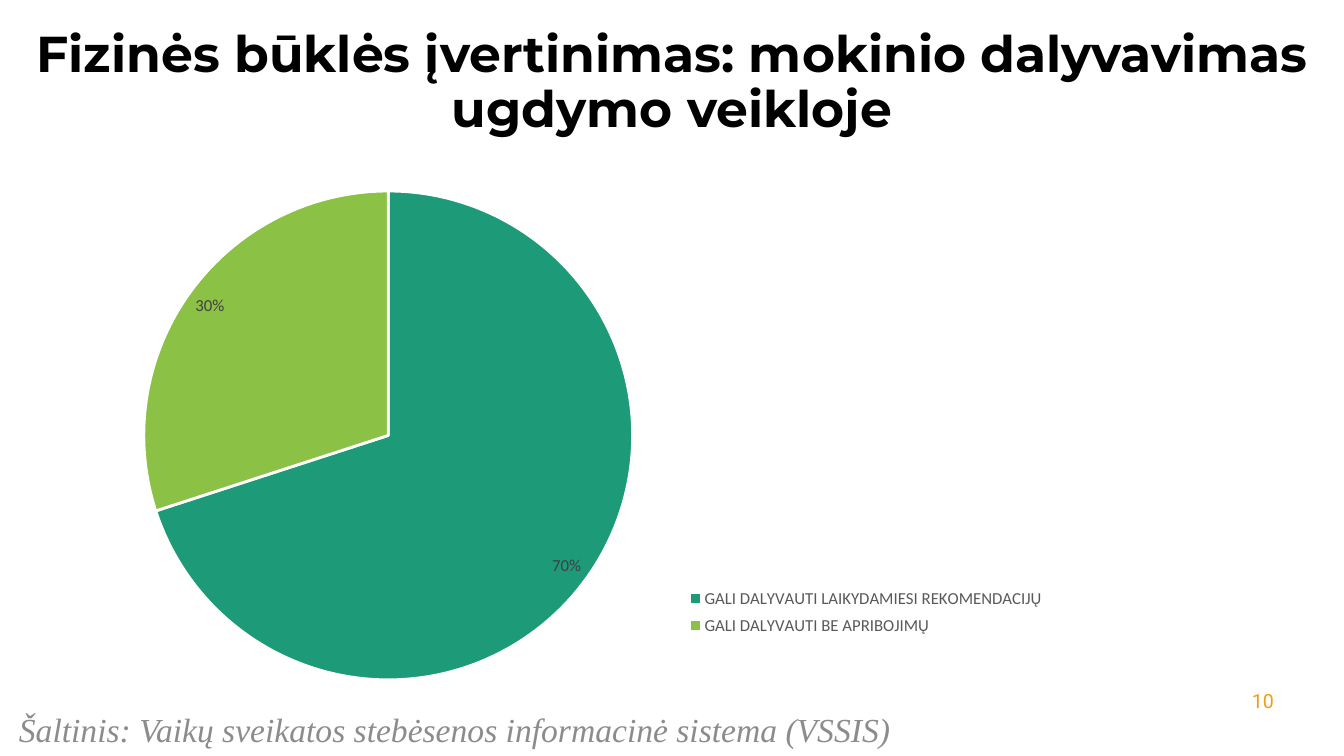
"""Build the slide on pupils' participation in educational activity."""
from lxml.etree import SubElement
from pptx import Presentation
from pptx.chart.data import CategoryChartData
from pptx.dml.color import RGBColor
from pptx.enum.chart import XL_CHART_TYPE, XL_LABEL_POSITION, XL_LEGEND_POSITION
from pptx.enum.text import MSO_ANCHOR, MSO_AUTO_SIZE, PP_ALIGN
from pptx.oxml.ns import qn
from pptx.util import Pt

PX = 914400 / 100.8
SLIDE = (1344, 756)
COLORS = {
    "title": "000000", "source": "8C8C8C", "number": "F19D19",
    "legend": "595959", "label": "404040", "border": "FFFFFF",
}
HEADING = "Fizinės būklės įvertinimas: mokinio dalyvavimas ugdymo veikloje"
SOURCE = "Šaltinis: Vaikų sveikatos stebėsenos informacinė sistema (VSSIS)"
PAGE = "10"
SHARES = [
    ("GALI DALYVAUTI LAIKYDAMIESI REKOMENDACIJŲ", 0.7, "1D9A78"),
    ("GALI DALYVAUTI BE APRIBOJIMŲ", 0.3, "8BC145"),
]
BOXES = {
    "title": (0, 0, 1344, 167),
    "source": (9, 704, 893, 38),
    "number": (1232, 684, 52, 40),
    "chart": (35, 176, 1077, 519),
    "pie": (144, 191, 489, 489),
    "legend": (684, 581, 364, 63),
}
FONTS = {
    "title": {"name": "Montserrat", "size": Pt(36), "bold": True},
    "source": {"name": "Times New Roman", "size": Pt(24), "italic": True},
    "number": {"name": "Roboto", "size": Pt(14)},
    "legend": {"name": "Calibri", "size": Pt(12)},
    "label": {"name": "Calibri", "size": Pt(12)},
}
ALIGNMENTS = {"title": PP_ALIGN.CENTER, "source": PP_ALIGN.LEFT, "number": PP_ALIGN.RIGHT}


def emu(part):
    return [round(length * PX) for length in BOXES[part]]


def style(font, part):
    for attribute, value in FONTS[part].items():
        setattr(font, attribute, value)
    font.color.rgb = RGBColor.from_string(COLORS[part])


def write(frame, part, words):
    frame.word_wrap = True
    frame.auto_size = MSO_AUTO_SIZE.NONE
    paragraph = frame.paragraphs[0]
    paragraph.alignment = ALIGNMENTS[part]
    run = paragraph.add_run()
    run.text = words
    style(run.font, part)
    return paragraph


def place(parent, part, successor, inner=False):
    for existing in parent.findall(qn("c:layout")):
        parent.remove(existing)
    layout = SubElement(parent, qn("c:layout"))
    parent.find(qn(successor)).addprevious(layout)
    manual = SubElement(layout, qn("c:manualLayout"))
    left, top, width, height = BOXES[part]
    chart_left, chart_top, chart_width, chart_height = BOXES["chart"]
    values = {
        "xMode": "edge", "yMode": "edge",
        "x": round((left - chart_left) / chart_width, 3),
        "y": round((top - chart_top) / chart_height, 3),
        "w": round(width / chart_width, 3),
        "h": round(height / chart_height, 3),
    }
    if inner:
        values = {"layoutTarget": "inner", **values}
    for tag, value in values.items():
        SubElement(manual, qn(f"c:{tag}")).set("val", str(value))


def add_pie(slide):
    shares = CategoryChartData(number_format="0%")
    shares.categories = [category for category, _, _ in SHARES]
    shares.add_series("Series 1", [share for _, share, _ in SHARES])
    chart = slide.shapes.add_chart(XL_CHART_TYPE.PIE, *emu("chart"), shares).chart
    chart.has_title = False
    chart.has_legend = True
    legend = chart.legend
    legend.position = XL_LEGEND_POSITION.RIGHT
    legend.include_in_layout = False
    style(legend.font, "legend")
    pie = chart.plots[0]
    pie.vary_by_categories = True
    pie.has_data_labels = True
    labels = pie.data_labels
    label_format = {
        "show_value": True, "show_percentage": False,
        "number_format": "0%", "number_format_is_linked": False,
        "position": XL_LABEL_POSITION.INSIDE_END,
    }
    for attribute, value in label_format.items():
        setattr(labels, attribute, value)
    style(labels.font, "label")
    for index, (_, _, color) in enumerate(SHARES):
        slice_format = pie.series[0].points[index].format
        slice_format.fill.solid()
        slice_format.fill.fore_color.rgb = RGBColor.from_string(color)
        slice_format.line.color.rgb = RGBColor.from_string(COLORS["border"])
        slice_format.line.width = Pt(2)
    place(chart.element.chart.plotArea, "pie", "c:pieChart", inner=True)
    place(chart.element.chart.find(qn("c:legend")), "legend", "c:overlay")


def main():
    deck = Presentation()
    deck.slide_width, deck.slide_height = [round(length * PX) for length in SLIDE]
    slide = deck.slides.add_slide(deck.slide_layouts[5])
    title = slide.shapes.title
    title.left, title.top, title.width, title.height = emu("title")
    title.text_frame.vertical_anchor = MSO_ANCHOR.MIDDLE
    write(title.text_frame, "title", HEADING).line_spacing = 0.9
    for part, words in (("source", SOURCE), ("number", PAGE)):
        write(slide.shapes.add_textbox(*emu(part)).text_frame, part, words)
    add_pie(slide)
    deck.save("out.pptx")


if __name__ == "__main__":
    main()
